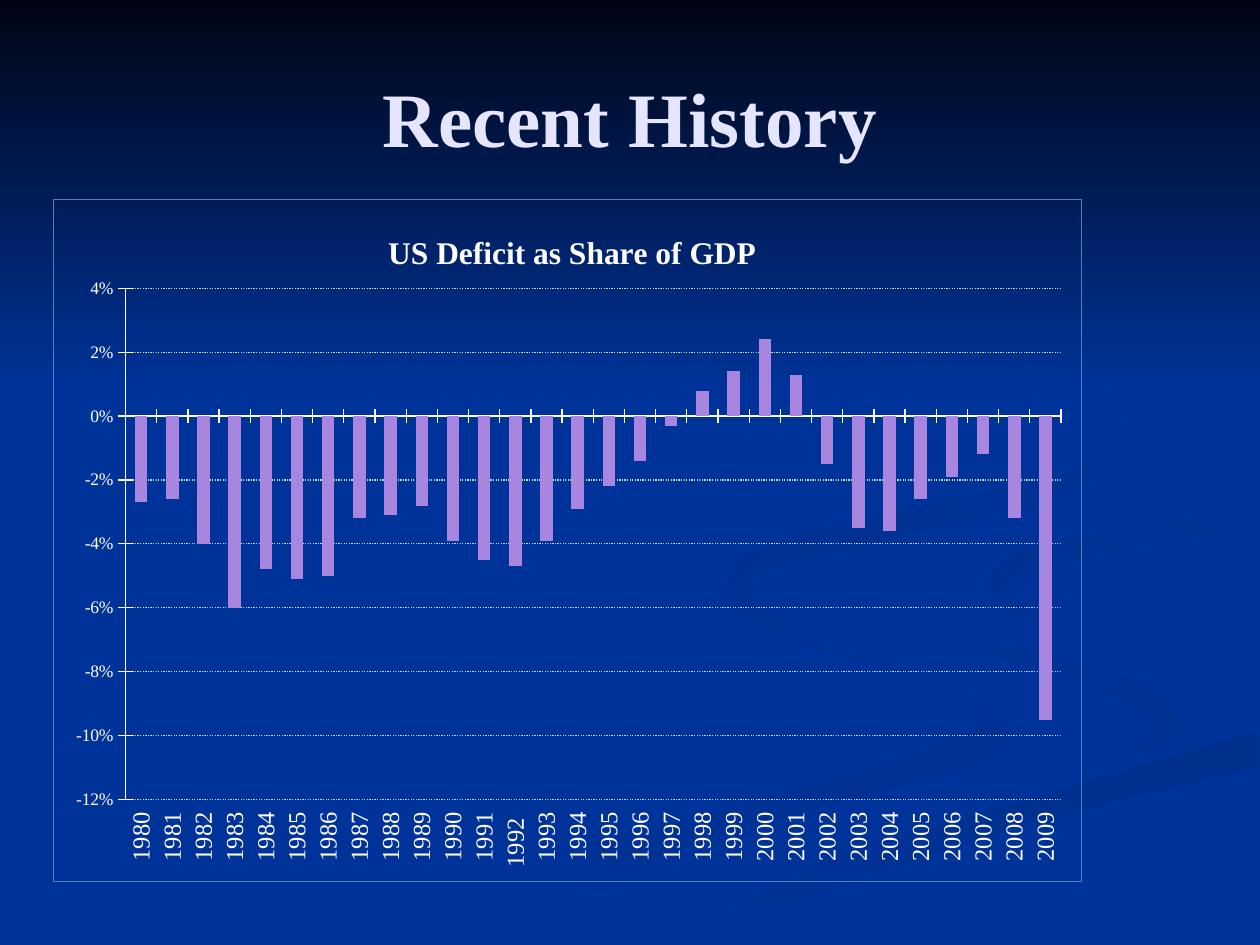
"""Build the slide on the recent history of the US deficit."""
from dataclasses import dataclass

from pptx import Presentation
from pptx.chart.data import CategoryChartData
from pptx.dml.color import RGBColor
from pptx.enum.chart import XL_CHART_TYPE, XL_TICK_LABEL_POSITION, XL_TICK_MARK
from pptx.enum.dml import MSO_LINE
from pptx.enum.shapes import MSO_SHAPE
from pptx.enum.text import MSO_ANCHOR, PP_ALIGN
from pptx.oxml import parse_xml
from pptx.oxml.ns import nsdecls, qn
from pptx.util import Pt

FONT = "Times New Roman"
COLORS = {
    "blue": "003399", "night": "000514", "swirl": "003193", "tail": "002F8C",
    "bend": "003091", "curl": "002F8E", "title": "E5E5FF", "white": "FFFFFF",
    "bar": "A886E0", "grid": "BADAF5", "border": "4F81BD",
}
FIRST_YEAR = 1980
DEFICITS = (
    -0.027, -0.026, -0.04, -0.06, -0.048, -0.051, -0.05, -0.032, -0.031, -0.028,
    -0.039, -0.045, -0.047, -0.039, -0.029, -0.022, -0.014, -0.003, 0.008, 0.014,
    0.024, 0.013, -0.015, -0.035, -0.036, -0.026, -0.019, -0.012, -0.032, -0.095,
)


@dataclass
class Ribbon:
    """A background ribbon, outlined in points."""
    start_color: str
    end_color: str
    angle: int
    outline: tuple


RIBBONS = (
    Ribbon("blue", "swirl", 0, (
        (562, 398), (462, 365), (414, 331), (411, 343), (440, 362), (524, 386),
        (562, 400), (562, 415), (503, 438), (330, 485), (216, 539), (260, 539),
        (406, 479), (562, 436), (576, 418))),
    Ribbon("blue", "swirl", 45, (
        (679, 410), (652, 389), (546, 359), (521, 334), (528, 351), (562, 373),
        (634, 395), (660, 415), (644, 436), (675, 422))),
    Ribbon("tail", "blue", 90, (
        (362, 539), (411, 539), (500, 498), (591, 469), (719, 438), (719, 418),
        (624, 446), (501, 482), (410, 518))),
    Ribbon("blue", "blue", 0, (
        (522, 334), (546, 359), (652, 389), (679, 410), (667, 427), (507, 472),
        (343, 539), (362, 539), (501, 482), (719, 418), (719, 387), (611, 362),
        (562, 334), (592, 312), (719, 289), (719, 279), (582, 300), (534, 316))),
    Ribbon("bend", "blue", 45, (
        (562, 331), (570, 345), (595, 357), (580, 342), (588, 330), (632, 316),
        (719, 302), (719, 289), (611, 307), (575, 318))),
    Ribbon("curl", "blue", 45, (
        (492, 310), (594, 289), (631, 272), (644, 248), (634, 221), (607, 198),
        (549, 168), (609, 201), (631, 220), (640, 241), (631, 259), (606, 272),
        (467, 302), (424, 318), (415, 333), (425, 348), (448, 360), (430, 346),
        (429, 332), (449, 320))),
)


def color(name: str) -> RGBColor:
    """Return the named colour."""
    return RGBColor.from_string(COLORS[name])


def style_background(shape, start: str, end: str, angle: int) -> None:
    """Give a shape a linear gradient, or one colour, and no line."""
    shape.shadow.inherit = False
    shape.line.fill.background()
    if start == end:
        shape.fill.solid()
        shape.fill.fore_color.rgb = color(start)
        return
    shape.fill.gradient()
    shape.fill.gradient_angle = (360 - angle) % 360
    for stop, name in zip(shape.fill.gradient_stops, (start, end)):
        stop.color.rgb = color(name)


def draw_ribbon(page, ribbon: Ribbon) -> None:
    """Draw one background ribbon."""
    builder = page.shapes.build_freeform(*ribbon.outline[0], scale=Pt(1))
    builder.add_line_segments(ribbon.outline[1:], close=True)
    style_background(builder.convert_to_shape(), ribbon.start_color, ribbon.end_color, ribbon.angle)


def style_font(font, size: float, name: str, bold: bool = False) -> None:
    """Set the face, size, colour and weight of a font."""
    font.name, font.size, font.bold = FONT, Pt(size), bold
    font.color.rgb = color(name)


def draw_title(page) -> None:
    """Draw the slide title."""
    box = page.shapes.add_textbox(Pt(36), Pt(21.6), Pt(648), Pt(90))
    frame = box.text_frame
    frame.word_wrap = True
    frame.vertical_anchor = MSO_ANCHOR.MIDDLE
    frame.text = "Recent History"
    para = frame.paragraphs[0]
    para.alignment = PP_ALIGN.CENTER
    style_font(para.runs[0].font, 44, "title", True)


def manual_layout(inner: bool, **places: float):
    """Return a chart layout element with fixed fractions."""
    target = '<c:layoutTarget val="inner"/>' if inner else ""
    modes = '<c:xMode val="edge"/><c:yMode val="edge"/>'
    values = "".join(f'<c:{key} val="{value}"/>' for key, value in places.items())
    return parse_xml(f'<c:layout {nsdecls("c")}><c:manualLayout>{target}{modes}{values}'
                     "</c:manualLayout></c:layout>")


def draw_chart(page) -> None:
    """Draw the column chart of yearly deficits."""
    data = CategoryChartData(number_format="0%")
    years = [str(FIRST_YEAR + index) for index in range(len(DEFICITS))]
    data.categories = ["1992 " if year == "1992" else year for year in years]
    data.add_series("Series 1", DEFICITS)
    chart = page.shapes.add_chart(
        XL_CHART_TYPE.COLUMN_STACKED, Pt(30.24), Pt(113.76), Pt(588.24), Pt(390.24), data).chart
    style_font(chart.font, 10, "white")
    chart.has_legend = False
    chart.has_title = True
    chart.chart_title.include_in_layout = False
    frame = chart.chart_title.text_frame
    frame.text = "US Deficit as Share of GDP"
    style_font(frame.paragraphs[0].runs[0].font, 18, "white", True)

    plot = chart.plots[0]
    plot.gap_width, plot.overlap, plot.vary_by_categories = 150, 100, False
    series = plot.series[0]
    series.invert_if_negative = False
    series.format.fill.solid()
    series.format.fill.fore_color.rgb = color("bar")

    for axis, size in ((chart.category_axis, 14), (chart.value_axis, 10)):
        style_font(axis.tick_labels.font, size, "white")
        axis.major_tick_mark = XL_TICK_MARK.CROSS
        axis.format.line.color.rgb = color("white")
        axis.format.line.width = Pt(0.75)
    chart.category_axis.tick_label_position = XL_TICK_LABEL_POSITION.LOW
    values = chart.value_axis
    values.minimum_scale, values.maximum_scale, values.major_unit = -0.12, 0.04, 0.02
    values.tick_labels.number_format = "0%"
    values.tick_labels.number_format_is_linked = False
    values.has_major_gridlines = True
    grid = values.major_gridlines.format.line
    grid.color.rgb = color("grid")
    grid.width, grid.dash_style = Pt(0.75), MSO_LINE.ROUND_DOT

    root = chart.element
    root.xpath("c:chart/c:plotArea/c:catAx/c:txPr/a:bodyPr")[0].set("rot", "-5400000")
    for holder in root.xpath("c:chart/c:title | c:chart/c:plotArea"):
        for layout in holder.findall(qn("c:layout")):
            holder.remove(layout)
    root.xpath("c:chart/c:plotArea")[0].insert(0, manual_layout(True, x=0.07, y=0.13, w=0.91, h=0.75))
    root.xpath("c:chart/c:title/c:tx")[0].addnext(manual_layout(False, x=0.32, y=0.04))
    root.find(qn("c:txPr")).addprevious(parse_xml(
        f'<c:spPr {nsdecls("c", "a")}><a:noFill/><a:ln w="{Pt(0.75)}"><a:solidFill>'
        f'<a:srgbClr val="{COLORS["border"]}"/></a:solidFill></a:ln></c:spPr>'))


def main() -> None:
    """Build and save the deck."""
    deck = Presentation()
    deck.slide_width, deck.slide_height = Pt(720), Pt(540)
    page = deck.slides.add_slide(deck.slide_layouts[6])
    page.background.fill.solid()
    page.background.fill.fore_color.rgb = color("blue")
    for ribbon in RIBBONS:
        draw_ribbon(page, ribbon)
    sky = page.shapes.add_shape(MSO_SHAPE.RECTANGLE, 0, 0, Pt(720), Pt(221.76))
    style_background(sky, "night", "blue", 90)
    draw_title(page)
    draw_chart(page)
    deck.save("out.pptx")


if __name__ == "__main__":
    main()
